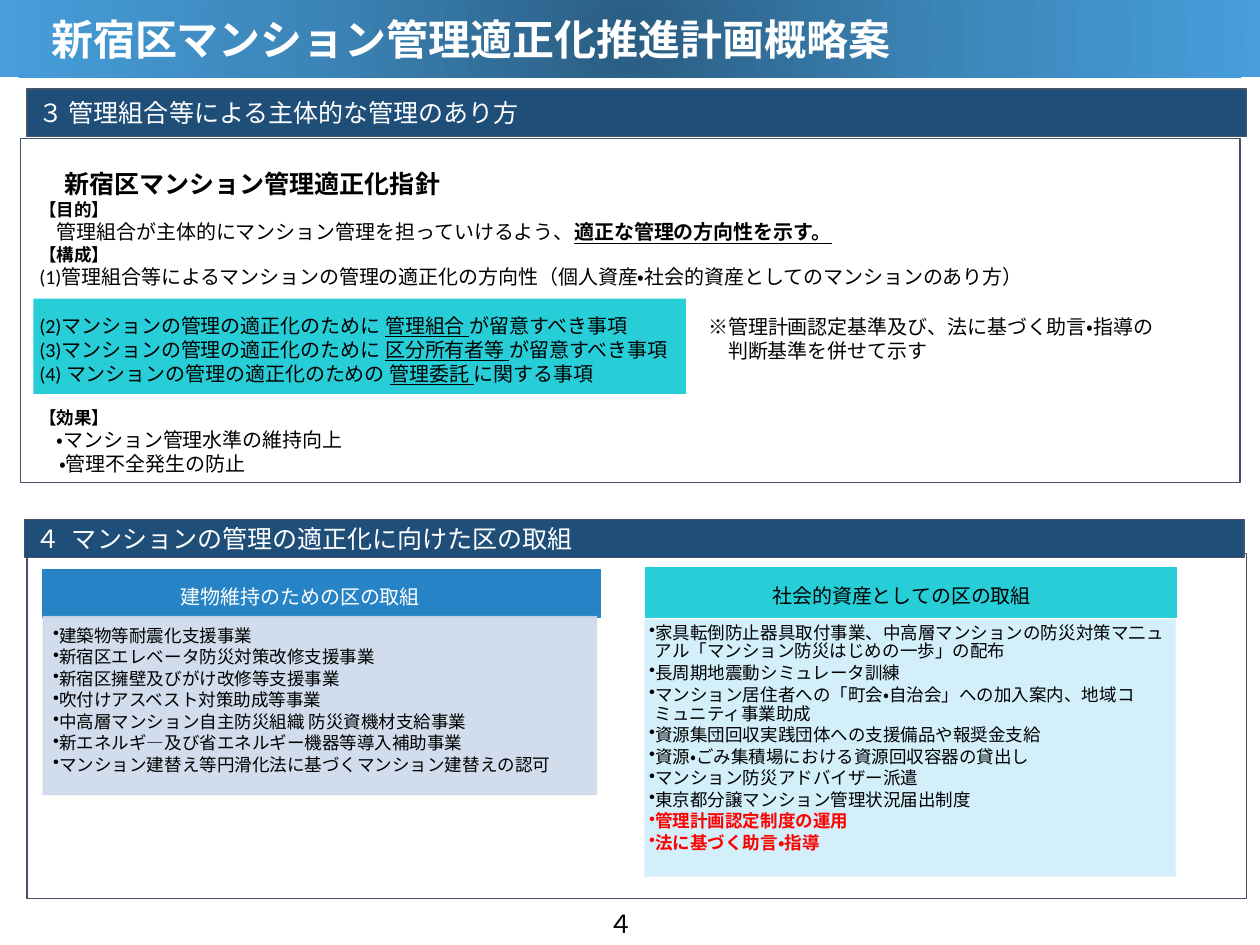
from dataclasses import dataclass, field
from typing import NamedTuple

from lxml import etree
from pptx import Presentation
from pptx.dml.color import RGBColor
from pptx.enum.lang import MSO_LANGUAGE_ID
from pptx.enum.shapes import MSO_SHAPE
from pptx.enum.text import MSO_ANCHOR, MSO_AUTO_SIZE, PP_ALIGN
from pptx.oxml import parse_xml
from pptx.oxml.ns import qn
from pptx.util import Cm, Pt

RECT = MSO_SHAPE.RECTANGLE
TOP, MID = MSO_ANCHOR.TOP, MSO_ANCHOR.MIDDLE
LEFT, CENTER = PP_ALIGN.LEFT, PP_ALIGN.CENTER
NO_FIT = MSO_AUTO_SIZE.NONE
JAPANESE = MSO_LANGUAGE_ID.JAPANESE

FONT, TITLE_FONT = "Calibri", "Noto Sans CJK JP"
BLACK, WHITE, RED = "000000", "FFFFFF", "FF0000"
NAVY, SLATE, BLUE, TEAL = "1F4E79", "44536A", "2683C6", "27CED7"
PALE, SKY = "CDD9EA", "D2EFFA"
GRADIENT = [(0, "2A5D82"), (50, "3C85B8"), (100, "479EDB")]
BULLET_STEP = 0.16
BODY_LEFT = 0.53


class Run(NamedTuple):
    text: str
    size: float = 16
    color: str = BLACK
    bold: bool = False
    underline: bool = False
    font: str = FONT


@dataclass
class Para:
    runs: list[Run]
    indent: float = 0
    before: float = 0
    align: int = LEFT
    bullet: bool = False


@dataclass
class Box:
    at: tuple[float, float, float, float]
    fill: str | None = None
    line: str | None = None
    width: float = 0.85
    alpha: int = 100
    inset: tuple[float, float, float, float] = (0, 0, 0, 0)
    anchor: int = TOP
    paras: list[Para] = field(default_factory=list)


def apply(target, values: dict) -> None:
    for name, value in values.items():
        setattr(target, name, value)


def paint(form, color: str, alpha: int = 100) -> None:
    """Give a fill or font colour from a hex string; alpha is in percent."""
    form.solid()
    form.fore_color.rgb = RGBColor.from_string(color)
    if alpha < 100:
        tone = form._xPr.find(".//" + qn("a:srgbClr"))
        etree.SubElement(tone, qn("a:alpha"), val=str(alpha * 1000))


def shade(shape, stops: list[tuple[int, str]]) -> None:
    """Fill a shape with a gradient that spreads in a circle from its centre."""
    marks = "".join(
        f'<a:gs pos="{pos * 1000}"><a:srgbClr val="{color}"/></a:gs>'
        for pos, color in stops
    )
    shape._element.spPr.append(parse_xml(
        '<a:gradFill xmlns:a="http://schemas.openxmlformats.org/drawingml/2006/main"'
        f' rotWithShape="1"><a:gsLst>{marks}</a:gsLst><a:path path="circle">'
        '<a:fillToRect l="50000" t="50000" r="50000" b="50000"/></a:path></a:gradFill>'
    ))


def place(shape, at: tuple[float, float, float, float]) -> None:
    apply(shape, dict(zip(("left", "top", "width", "height"), map(Cm, at))))


def write(shape, paras: list[Para], inset: tuple, anchor: int) -> None:
    frame = shape.text_frame
    sides = ("margin_left", "margin_top", "margin_right", "margin_bottom")
    apply(frame, dict(zip(sides, map(Cm, inset))))
    apply(frame, {"word_wrap": True, "auto_size": NO_FIT, "vertical_anchor": anchor})
    for i, para in enumerate(paras):
        line = frame.paragraphs[0] if i == 0 else frame.add_paragraph()
        apply(line, {"alignment": para.align, "space_before": Pt(para.before)})
        props = line._p.get_or_add_pPr()
        props.set("marL", str(Cm(para.indent)))
        props.set("indent", str(-Cm(para.indent) if para.bullet else 0))
        if para.bullet:
            apply(line, {"level": 1, "line_spacing": 0.9, "space_after": Pt(2.1)})
            etree.SubElement(props, qn("a:buChar"), char="•")
        for run in para.runs:
            part = line.add_run()
            part.text = run.text
            apply(part.font, {
                "name": run.font, "size": Pt(run.size), "bold": run.bold,
                "underline": run.underline, "language_id": JAPANESE,
            })
            paint(part.font.fill, run.color)


def draw(slide, box: Box) -> None:
    shape = slide.shapes.add_shape(RECT, *map(Cm, box.at))
    shape.shadow.inherit = False
    if box.fill:
        paint(shape.fill, box.fill, box.alpha)
    else:
        shape.fill.background()
    if box.line:
        paint(shape.line.fill, box.line, box.alpha)
        shape.line.width = Pt(box.width)
    else:
        shape.line.fill.background()
    write(shape, box.paras, box.inset, box.anchor)


def note(slide, at: tuple, paras: list[Para]) -> None:
    write(slide.shapes.add_textbox(*map(Cm, at)), paras, (0.25, 0.13, 0.25, 0.13), TOP)


def band(left: float, top: float, height: float, text: str) -> Box:
    return Box((left, top, 34.42, height), NAVY, SLATE, 1, inset=(0.32, 0, 0, 0),
               anchor=MID, paras=[Para([Run(text, 20, WHITE)])])


def head(at: tuple, fill: str, color: str, inset: tuple, text: str) -> Box:
    return Box(at, fill, fill, inset=inset, anchor=MID,
               paras=[Para([Run(text, 16, color)], align=CENTER)])


def items(texts: list[str], color: str = BLACK, bold: bool = False) -> list[Para]:
    return [Para([Run(text, 14, color, bold)], BULLET_STEP, bullet=True) for text in texts]


def body(*runs: Run, shift: float = 0, before: float = 0) -> Para:
    return Para(list(runs), BODY_LEFT + shift, before)


def label(text: str, before: float = 0) -> Para:
    return body(Run(text, 14, bold=True), before=before)


def point(start: str, key: str, end: str, before: float = 0) -> Para:
    return body(Run(start), Run(key, underline=True), Run(end), before=before)


GUIDE = [
    body(Run("新宿区マンション管理適正化指針", 20, bold=True), shift=0.71),
    label("【目的】"),
    body(Run("管理組合が主体的にマンション管理を担っていけるよう、"),
         Run("適正な管理の方向性を示す。", bold=True, underline=True), shift=0.49),
    label("【構成】"),
    body(Run("(1)管理組合等によるマンションの管理の適正化の方向性"
             "（個人資産・社会的資産としてのマンションのあり方）")),
    point("(2)マンションの管理の適正化のために ", "管理組合 ", "が留意すべき事項", 19.5),
    point("(3)マンションの管理の適正化のために ", "区分所有者等 ", "が留意すべき事項"),
    point("(4) マンションの管理の適正化のための ", "管理委託 ", "に関する事項"),
    label("【効果】", 17),
    body(Run("・マンション管理水準の維持向上"), shift=0.49),
    body(Run("・管理不全発生の防止"), shift=0.56),
]
UPKEEP = items([
    "建築物等耐震化支援事業",
    "新宿区エレベータ防災対策改修支援事業",
    "新宿区擁壁及びがけ改修等支援事業",
    "吹付けアスベスト対策助成等事業",
    "中高層マンション自主防災組織 防災資機材支給事業",
    "新エネルギ―及び省エネルギー機器等導入補助事業",
    "マンション建替え等円滑化法に基づくマンション建替えの認可",
])
SOCIAL = items([
    "家具転倒防止器具取付事業、中高層マンションの防災対策マ二ュアル「マンション防災はじめの一歩」の配布",
    "長周期地震動シミュレータ訓練",
    "マンション居住者への「町会・自治会」への加入案内、地域コミュニティ事業助成",
    "資源集団回収実践団体への支援備品や報奨金支給",
    "資源・ごみ集積場における資源回収容器の貸出し",
    "マンション防災アドバイザー派遣",
    "東京都分譲マンション管理状況届出制度",
]) + items(["管理計画認定制度の運用", "法に基づく助言・指導"], RED, True)

BOXES = [
    Box((0.94, 8.43, 18.42, 2.69), TEAL),
    Box((0.76, 15.62, 34.42, 9.75), line=SLATE, width=1),
    band(0.76, 2.51, 1.34, "３ 管理組合等による主体的な管理のあり方"),
    band(0.69, 14.66, 1.07, "４  マンションの管理の適正化に向けた区の取組"),
    head((1.19, 16.08, 15.75, 1.35), BLUE, WHITE, (0, 0.18, 1.17, 0),
         "建物維持のための区の取組"),
    Box((1.22, 17.4, 15.62, 5.03), PALE, PALE, alpha=90,
        inset=(0.28, 0.3, 0, 0), paras=UPKEEP),
    head((18.21, 16.03, 14.99, 1.4), TEAL, BLACK, (0, 0.13, 0.51, 0),
         "社会的資産としての区の取組"),
    Box((18.19, 17.48, 14.99, 7.26), SKY, inset=(0.13, 0.13, 0.18, 0.2), paras=SOCIAL),
    Box((0.58, 3.91, 34.42, 9.7), line=SLATE, width=1, inset=(0, 0.86, 0, 0), paras=GUIDE),
]


def main() -> None:
    deck = Presentation()
    apply(deck, {"slide_width": Cm(35.56), "slide_height": Cm(26.67)})
    slide = deck.slides.add_slide(deck.slide_layouts[5])
    title = slide.shapes.title
    place(title, (0, 0, 35.56, 2.18))
    shade(title, GRADIENT)
    name = Run("新宿区マンション管理適正化推進計画概略案", 33.6, WHITE, True, font=TITLE_FONT)
    write(title, [Para([name])], (1.44, 0.13, 0.25, 0.13), MID)
    for box in BOXES:
        draw(slide, box)
    note(slide, (19.74, 8.76, 14.05, 1.63), [
        Para([Run("※管理計画認定基準及び、法に基づく助言・指導の")]),
        Para([Run("判断基準を併せて示す")], 0.56),
    ])
    note(slide, (16.92, 25.5, 1.8, 1.12), [Para([Run("４", 20)])])
    deck.save("out.pptx")


if __name__ == "__main__":
    main()
